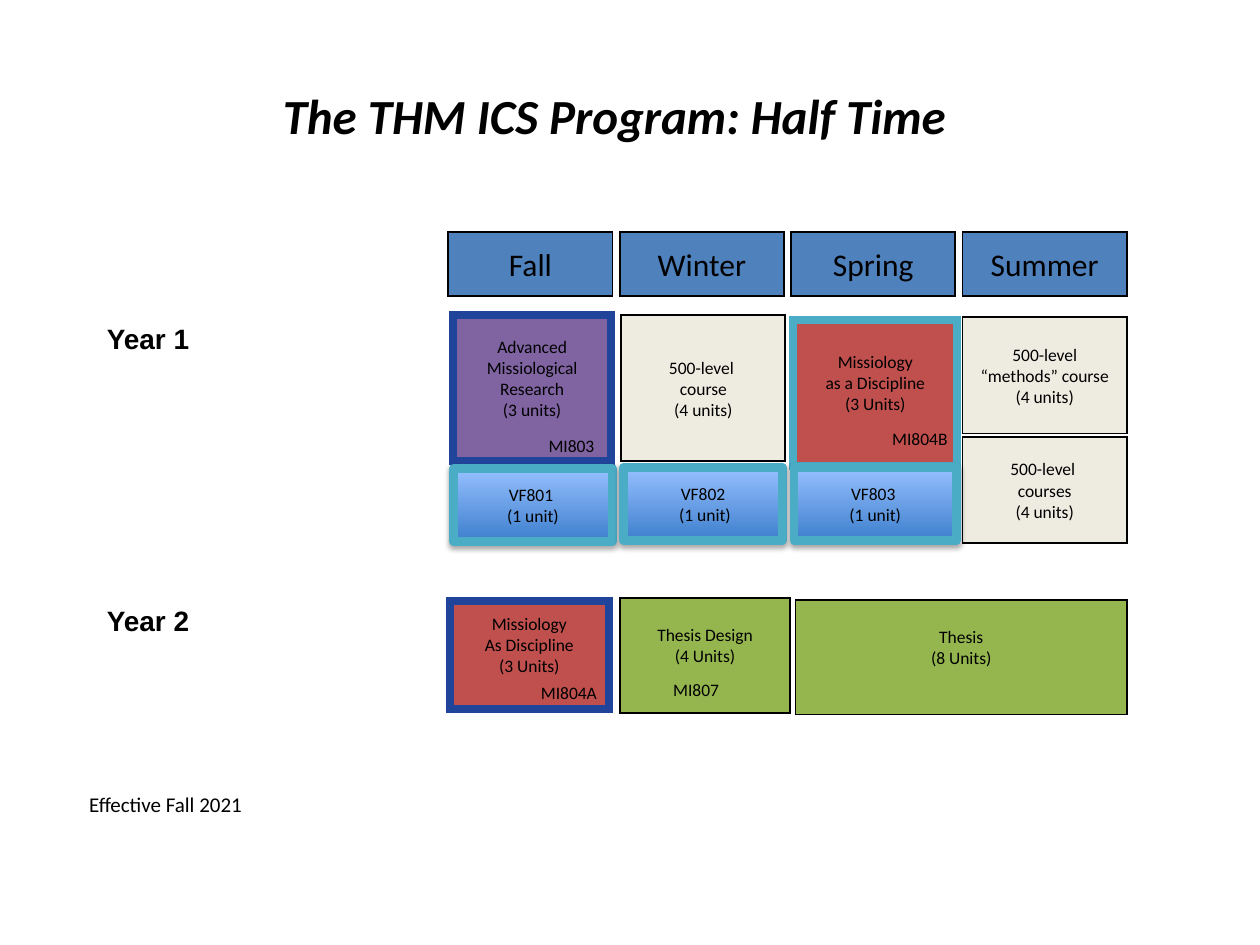
from lxml.etree import SubElement
from pptx import Presentation
from pptx.dml.color import RGBColor as Rgb
from pptx.enum.shapes import MSO_SHAPE as Shape
from pptx.enum.text import MSO_ANCHOR as Anchor, PP_ALIGN as Align
from pptx.oxml.ns import qn
from pptx.util import Pt

COLORS = {
    "black": "000000", "header": "4F81BD", "purple": "8064A2", "red": "C0504D",
    "cream": "EEECE1", "green": "95B64F", "navy": "21449B", "teal": "4BACC6",
    "deep": "3E7FCD", "light": "96C0FF",
}


def color(name):
    return Rgb.from_string(COLORS[name])


class Board:
    body = {"name": "Calibri", "size": Pt(10)}
    heading = {"name": "Calibri", "size": Pt(18)}
    title = {"name": "Calibri", "size": Pt(28), "bold": True, "italic": True}
    year = {"name": "Arial", "size": Pt(16), "bold": True}
    note = {"name": "Calibri", "size": Pt(12)}

    def __init__(self, slide):
        self.slide = slide

    def set_text(self, frame, text, style, align, anchor, wrap=True, raised=0):
        layout = {
            "word_wrap": wrap, "vertical_anchor": anchor,
            "margin_left": Pt(7.2), "margin_right": Pt(7.2),
            "margin_top": Pt(3.6), "margin_bottom": Pt(3.6 + raised),
        }
        for key, value in layout.items():
            setattr(frame, key, value)
        frame.text = text
        for paragraph in frame.paragraphs:
            paragraph.alignment = align
            font = paragraph.font
            for key, value in style.items():
                setattr(font, key, value)
            font.color.rgb = color("black")

    def label(self, place, text, style, align=Align.LEFT, anchor=Anchor.TOP, wrap=True):
        box = self.slide.shapes.add_textbox(*map(Pt, place))
        self.set_text(box.text_frame, text, style, align, anchor, wrap)

    def tag(self, place, code):
        self.label(place, code, self.body, Align.CENTER, wrap=False)

    def outlined(self, place, text, style, border, weight, raised=0):
        card = self.slide.shapes.add_shape(Shape.RECTANGLE, *map(Pt, place))
        card.shadow.inherit = False
        card.line.color.rgb = color(border)
        card.line.width = Pt(weight)
        self.set_text(card.text_frame, text, style, Align.CENTER, Anchor.MIDDLE, raised=raised)
        return card

    def course(self, place, text, fill, border="black", weight=1, style=None, raised=0):
        card = self.outlined(place, text, style or self.body, border, weight, raised)
        card.fill.solid()
        card.fill.fore_color.rgb = color(fill)
        outline = card._element.spPr.find(qn("a:ln"))
        SubElement(outline, qn("a:miter"), lim="800000")

    def seminar(self, place, text):
        card = self.outlined(place, text, self.body, "teal", 5)
        card.fill.gradient()
        card.fill.gradient_angle = 90
        for stop, name in zip(card.fill.gradient_stops, ("deep", "light")):
            stop.color.rgb = color(name)
        effects = card._element.spPr.find(qn("a:effectLst"))
        shadow = SubElement(effects, qn("a:outerShdw"), blurRad=str(Pt(3.1)),
                            dist=str(Pt(1.8)), dir="5400000", rotWithShape="0")
        tint = SubElement(shadow, qn("a:srgbClr"), val=COLORS["black"])
        SubElement(tint, qn("a:alpha"), val="35000")


def main():
    deck = Presentation()
    deck.slide_width, deck.slide_height = Pt(720), Pt(540)
    board = Board(deck.slides.add_slide(deck.slide_layouts[6]))

    board.label((0, 29.5, 702, 72), "The THM ICS Program: Half Time", board.title,
                Align.CENTER, Anchor.MIDDLE)

    first, pitch, width = 256.2, 97.95, 93.8
    for column, season in enumerate(("Fall", "Winter", "Spring", "Summer")):
        board.course((first + column * pitch, 132.6, width, 36.8), season, "header",
                     style=board.heading)
    summer = first + 3 * pitch

    blank_line = 12.2
    board.course((258.8, 180.2, 90.6, 83.5), "Advanced\nMissiological\nResearch\n(3 units)",
                 "purple", "navy", 4.5, raised=blank_line)
    board.tag((301.7, 244.8, 49.7, 19.4), "MI803")
    board.course((453.4, 183, 93.6, 83.5), "Missiology\nas a Discipline\n(3 Units)",
                 "red", "teal", 4.5, raised=blank_line)
    board.tag((501.1, 241.2, 49, 19.4), "MI804B")
    board.course((257, 343.2, 90.9, 62), "Missiology\nAs Discipline\n(3 Units)",
                 "red", "navy", 4.5, raised=blank_line)
    board.tag((301.7, 385.9, 46.8, 19.4), "MI804A")

    board.course((summer, 181, width, 66.8), "500-level\n“methods” course\n(4 units)", "cream")
    board.course((355, 180.2, width, 83.4), "500-level \ncourse\n(4 units)", "cream")
    board.course((summer, 249.8, width, 60.5), "500-level \ncourses\n(4 units)", "cream")

    board.course((454.5, 342.9, 189.5, 65.4), "Thesis\n(8 Units)", "green", raised=blank_line)
    board.course((354.2, 341.6, 97.4, 66), "Thesis Design\n(4 Units)", "green",
                 raised=blank_line)
    board.tag((368.6, 384.5, 58.3, 11.5), "MI807")

    for place, text in (
        ((259.2, 267.6, 90.7, 41.8), "VF801 \n(1 unit)"),
        ((356.4, 267.1, 90.7, 41.8), "VF802\n (1 unit)"),
        ((453.8, 267.1, 92.7, 41.8), "VF803 \n(1 unit)"),
    ):
        board.seminar(place, text)

    for top, year in ((180, "Year 1"), (341.3, "Year 2")):
        board.label((54, top, 77, 26.6), year, board.year)
    board.label((43.9, 448.6, 129.6, 21.6), "Effective Fall 2021", board.note)

    deck.save("out.pptx")


if __name__ == "__main__":
    main()
